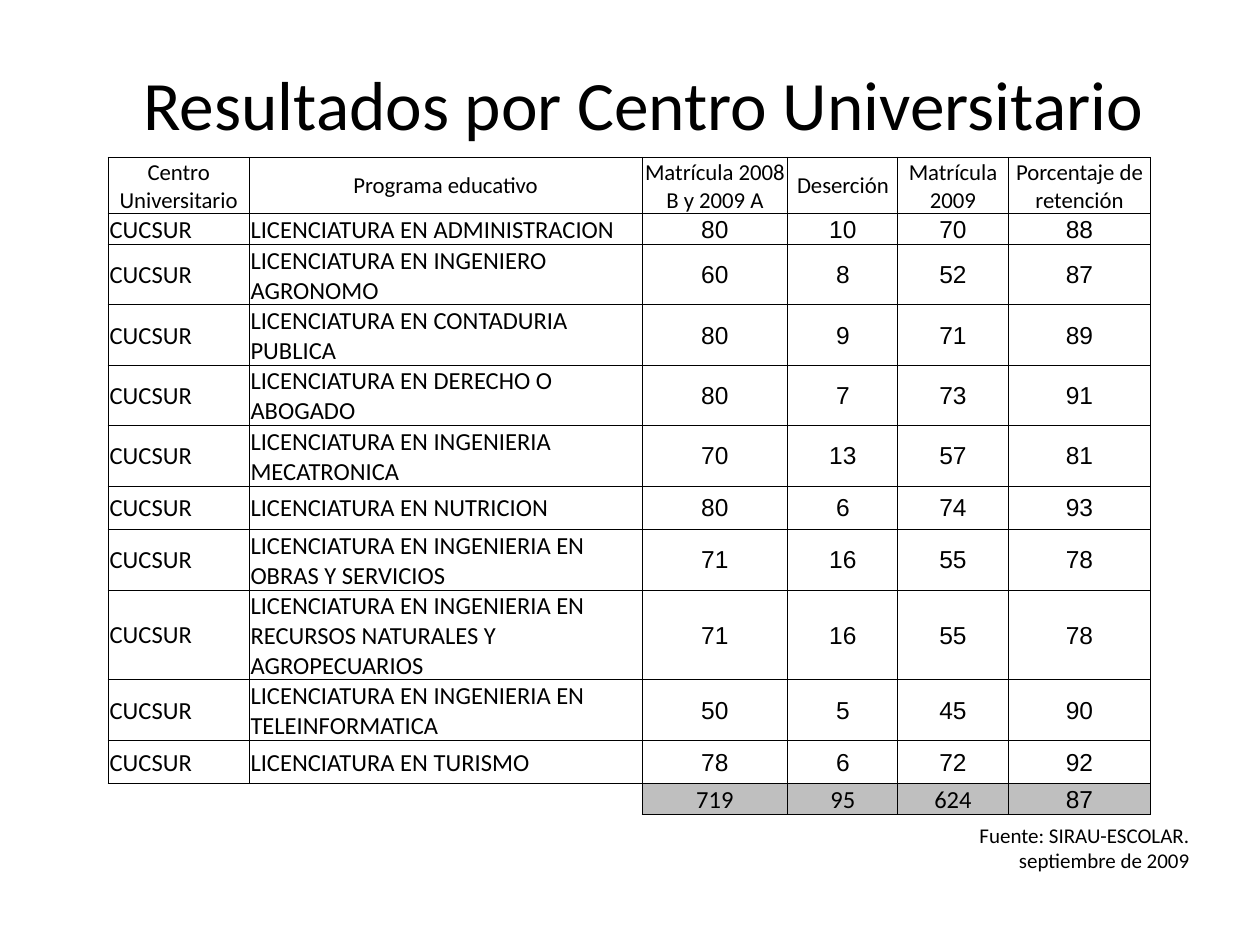
from lxml import etree
from pptx import Presentation
from pptx import util as u
from pptx.dml import color
from pptx.enum import text
from pptx.oxml import ns

# Content
TITLE = "Resultados por Centro Universitario"
SOURCE = "Fuente: SIRAU-ESCOLAR.\nseptiembre de 2009"
CENTRE = "CUCSUR"
HEADERS = ["Centro Universitario", "Programa educativo", "Matrícula 2008 B y 2009 A",
           "Deserción", "Matrícula 2009", "Porcentaje de retención"]
# Programme, enrolment 2008-2009, dropouts, enrolment 2009, retention, row height in cm
PROGRAMMES = [
    ("LICENCIATURA EN ADMINISTRACION", 80, 10, 70, 88, 0.6),
    ("LICENCIATURA EN INGENIERO AGRONOMO", 60, 8, 52, 87, 1.2),
    ("LICENCIATURA EN CONTADURIA PUBLICA", 80, 9, 71, 89, 1.2),
    ("LICENCIATURA EN DERECHO O ABOGADO", 80, 7, 73, 91, 1.2),
    ("LICENCIATURA EN INGENIERIA MECATRONICA", 70, 13, 57, 81, 1.2),
    ("LICENCIATURA EN NUTRICION", 80, 6, 74, 93, 0.88),
    ("LICENCIATURA EN INGENIERIA EN OBRAS Y SERVICIOS", 71, 16, 55, 78, 1.2),
    ("LICENCIATURA EN INGENIERIA EN RECURSOS NATURALES Y AGROPECUARIOS", 71, 16, 55, 78, 1.8),
    ("LICENCIATURA EN INGENIERIA EN TELEINFORMATICA", 50, 5, 45, 90, 1.2),
    ("LICENCIATURA EN TURISMO", 78, 6, 72, 92, 0.88),
]
TOTALS = ["", "", 719, 95, 624, 87]

COLUMN_WIDTHS = [2.84, 7.92, 2.94, 2.22, 2.22, 2.88]
ROWS = [HEADERS] + [[CENTRE, *row[:-1]] for row in PROGRAMMES] + [TOTALS]
ROW_HEIGHTS = [1.12] + [row[-1] for row in PROGRAMMES] + [0.6]
LAST_ROW, LAST_COLUMN = len(ROWS) - 1, len(HEADERS) - 1

BLACK, WHITE, GREY = "000000", "FFFFFF", "BFBFBF"
LEFT, CENTER, RIGHT = text.PP_ALIGN.LEFT, text.PP_ALIGN.CENTER, text.PP_ALIGN.RIGHT


def rgb(value):
    return color.RGBColor.from_string(value)


def write(frame, words, size, align, font="Calibri"):
    frame.text = words
    frame.word_wrap = True
    for para in frame.paragraphs:
        para.alignment = align
        for span in para.runs:
            span.font.name = font
            span.font.size = u.Pt(size)
            span.font.color.rgb = rgb(BLACK)
        if not para.runs:
            # An empty cell keeps the text size, so its row stays low
            etree.SubElement(para._p, ns.qn("a:endParaRPr"), sz=str(size * 100))


def add_text(page, place, words, size, align, anchor):
    box = page.shapes.add_textbox(*(u.Cm(length) for length in place))
    write(box.text_frame, words, size, align)
    box.text_frame.vertical_anchor = anchor


def draw_borders(cell, visible):
    properties = cell._tc.get_or_add_tcPr()
    for side in "LRTB":
        line = etree.SubElement(properties, ns.qn(f"a:ln{side}"), w=str(u.Pt(0.5)))
        if side in visible:
            fill = etree.SubElement(line, ns.qn("a:solidFill"))
            etree.SubElement(fill, ns.qn("a:srgbClr"), val=BLACK)
        else:
            etree.SubElement(line, ns.qn("a:noFill"))


def format_cell(cell, value, row, column):
    is_number = isinstance(value, int)
    is_total = row == LAST_ROW
    # Numbers are in Arial, except the totals before the retention column
    arial = is_number and (not is_total or column == LAST_COLUMN)
    write(cell.text_frame, str(value), 13 if row == 0 else 14,
          CENTER if is_number or row == 0 else LEFT, "Arial" if arial else "Calibri")
    cell.vertical_anchor = text.MSO_ANCHOR.MIDDLE
    cell.margin_left = cell.margin_right = cell.margin_top = u.Cm(0.03)
    cell.margin_bottom = 0

    # Blank cells only border on their neighbours
    visible = "LRTB" if value != "" else "T" if column == 0 else "TR"
    draw_borders(cell, visible)

    if is_total and is_number:
        fill = GREY
    elif is_number and column == LAST_COLUMN:
        fill = WHITE
    else:
        cell.fill.background()
        return
    cell.fill.solid()
    cell.fill.fore_color.rgb = rgb(fill)


def add_results(page):
    frame = page.shapes.add_table(len(ROWS), len(HEADERS), u.Cm(2.18), u.Cm(3.17),
                                  u.Cm(sum(COLUMN_WIDTHS)), u.Cm(sum(ROW_HEIGHTS)))
    table = frame.table
    table.first_row = table.horz_banding = False
    for column, width in zip(table.columns, COLUMN_WIDTHS):
        column.width = u.Cm(width)
    for row, height in zip(table.rows, ROW_HEIGHTS):
        row.height = u.Cm(height)
    for row, values in enumerate(ROWS):
        for column, value in enumerate(values):
            format_cell(table.cell(row, column), value, row, column)


def main():
    deck = Presentation()
    deck.slide_width, deck.slide_height = u.Cm(25.4), u.Cm(19.05)
    page = deck.slides.add_slide(deck.slide_layouts[6])

    # Title, table and source note
    add_text(page, (2.18, 0.58, 21.59, 2.97), TITLE, 39.6, CENTER, text.MSO_ANCHOR.MIDDLE)
    add_results(page)
    add_text(page, (17.65, 16.46, 6.58, 1.27), SOURCE, 12, RIGHT, text.MSO_ANCHOR.TOP)

    deck.save("out.pptx")


if __name__ == "__main__":
    main()
